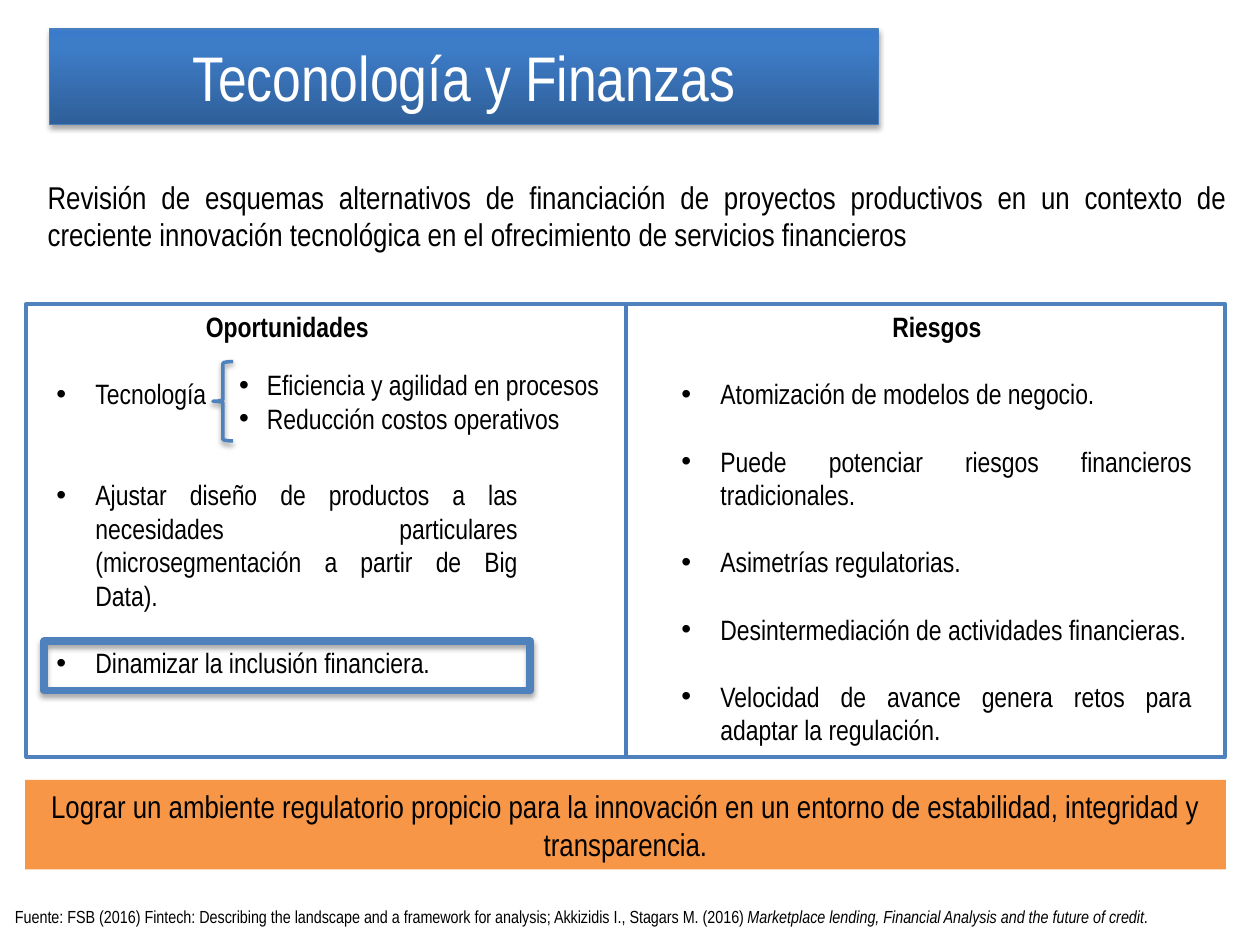
import lxml.etree
import pptx
import pptx.dml.color
import pptx.enum.shapes
import pptx.enum.text
import pptx.oxml.ns
import pptx.util

COLORS = {
    "text": "000000",
    "white": "FFFFFF",
    "outline": "4F81BD",
    "edge": "4B7EBC",
    "banner": "F79646",
    "gradient": {0: "2F5F99", 80: "3D7CC7", 100: "3A7CCB"},
}
FONT = "Arial Narrow"
COLUMNS, ROWS = 100, 75
WIDTH, HEIGHT = pptx.util.Inches(10), pptx.util.Inches(7.5)
LINE_PITCH = 19.2
PANEL_TOP, PANEL_HEIGHT = 24.1, 36
ALIGN = pptx.enum.text.PP_ALIGN
SHAPE = pptx.enum.shapes.MSO_SHAPE


def grid(left, top, width, height):
    """Convert grid columns and rows to lengths."""
    return (
        int(left * WIDTH / COLUMNS),
        int(top * HEIGHT / ROWS),
        int(width * WIDTH / COLUMNS),
        int(height * HEIGHT / ROWS),
    )


def rgb(value):
    """Return a colour from a hex string."""
    return pptx.dml.color.RGBColor.from_string(value)


def add_node(parent, tag, **attributes):
    """Append a drawing element with the given attributes."""
    node = lxml.etree.SubElement(parent, pptx.oxml.ns.qn(tag))
    for name, value in attributes.items():
        node.set(name, str(value))
    return node


def write_paragraph(frame, runs, first, size=16, align=ALIGN.JUSTIFY, gap=0, indent=0, color="text"):
    """Write one paragraph from pairs of text and font values."""
    paragraph = frame.paragraphs[0] if first else frame.add_paragraph()
    paragraph.alignment = align
    if gap:
        paragraph.space_before = pptx.util.Pt(gap * LINE_PITCH)
    if indent:
        properties = paragraph._p.get_or_add_pPr()
        length = pptx.util.Inches(indent)
        properties.set("marL", str(length))
        properties.set("indent", str(-length))
        add_node(properties, "a:buFont", typeface="Arial")
        add_node(properties, "a:buChar", char="•")
    for text, extra in runs:
        run = paragraph.add_run()
        run.text = text
        values = {"name": FONT, "size": pptx.util.Pt(size), **extra}
        for name, value in values.items():
            setattr(run.font, name, value)
        run.font.color.rgb = rgb(COLORS[color])


def add_text(slide, place, paragraphs):
    """Add a wrapping text box with formatted paragraphs."""
    frame = slide.shapes.add_textbox(*grid(*place)).text_frame
    frame.word_wrap = True
    for index, (runs, values) in enumerate(paragraphs):
        write_paragraph(frame, runs, index == 0, **values)


def add_panel(slide, place, heading, items):
    """Add a heading with bulleted items, each after a gap in lines."""
    paragraphs = [([(heading, {"bold": True})], {"align": ALIGN.CENTER})]
    paragraphs += [([(text, {})], {"gap": gap, "indent": 0.31}) for text, gap in items]
    add_text(slide, place, paragraphs)


def add_shape(slide, kind, place, fill=None, line=None, weight=1, shadow=0):
    """Add a preset shape with optional fill, outline and shadow."""
    shape = slide.shapes.add_shape(kind, *grid(*place))
    shape.shadow.inherit = False
    if fill:
        shape.fill.solid()
        shape.fill.fore_color.rgb = rgb(fill)
    else:
        shape.fill.background()
    if line:
        shape.line.color.rgb = rgb(line)
        shape.line.width = pptx.util.Pt(weight)
    else:
        shape.line.fill.background()
    if shadow:
        effects = shape._element.spPr.find(pptx.oxml.ns.qn("a:effectLst"))
        outer = add_node(effects, "a:outerShdw", blurRad=pptx.util.Pt(3.1),
                         dist=pptx.util.Pt(1.8), dir=5400000, rotWithShape=0)
        color = add_node(outer, "a:srgbClr", val=COLORS["text"])
        add_node(color, "a:alpha", val=shadow * 1000)
    return shape


def set_gradient(shape, stops):
    """Fill a shape with a gradient running from bottom to top."""
    shape.fill.gradient()
    shape.fill.gradient_angle = 90
    stop_list = next(shape._element.spPr.iter(pptx.oxml.ns.qn("a:gsLst")))
    for stop in list(stop_list):
        stop_list.remove(stop)
    for position, color in stops.items():
        stop = add_node(stop_list, "a:gs", pos=position * 1000)
        add_node(stop, "a:srgbClr", val=color)


def add_label(shape, text, size, color):
    """Write centred text inside a shape."""
    frame = shape.text_frame
    frame.word_wrap = True
    frame.vertical_anchor = pptx.enum.text.MSO_ANCHOR.MIDDLE
    write_paragraph(frame, [(text, {})], True, size, ALIGN.CENTER, color=color)


def add_divider(slide, column, top, bottom):
    """Add a vertical line between the two panels."""
    left, start, _, end = grid(column, top, 0, bottom)
    line = slide.shapes.add_connector(
        pptx.enum.shapes.MSO_CONNECTOR.STRAIGHT, left, start, left, end)
    line.line.color.rgb = rgb(COLORS["edge"])
    line.line.width = pptx.util.Pt(2.25)
    add_node(line._element.spPr, "a:effectLst")


def main():
    """Build and save the slide."""
    presentation = pptx.Presentation()
    presentation.slide_width, presentation.slide_height = WIDTH, HEIGHT
    slide = presentation.slides.add_slide(presentation.slide_layouts[6])

    title = add_shape(slide, SHAPE.RECTANGLE, (3.9, 2.3, 65.8, 7.6),
                      line=COLORS["edge"], weight=0.75, shadow=35)
    set_gradient(title, COLORS["gradient"])
    add_label(title, "Teconología y Finanzas", 36, "white")

    add_text(slide, (2.8, 13.6, 95.6, 7.1), [([(
        "Revisión de esquemas alternativos de financiación de proyectos productivos en un "
        "contexto de creciente innovación tecnológica en el ofrecimiento de servicios financieros",
        {})], {"size": 18})])
    add_text(slide, (0.2, 71.4, 99.8, 2.7), [([
        ("Fuente: FSB (2016) Fintech: Describing the landscape and a framework for analysis; "
         "Akkizidis I., Stagars M. (2016) ", {}),
        ("Marketplace lending, Financial Analysis and the future of credit", {"italic": True}),
        (".", {})], {"size": 10, "align": ALIGN.LEFT})])

    add_panel(slide, (3.5, PANEL_TOP, 38.6, 31.3), "Oportunidades", [
        ("Tecnología", 1),
        ("Ajustar diseño de productos a las necesidades particulares "
         "(microsegmentación a partir de Big Data).", 2),
        ("Dinamizar la inclusión financiera.", 1),
    ])
    add_panel(slide, (53.1, PANEL_TOP, 42.5, PANEL_HEIGHT), "Riesgos", [
        (text, 1) for text in (
            "Atomización de modelos de negocio.",
            "Puede potenciar riesgos financieros tradicionales.",
            "Asimetrías regulatorias.",
            "Desintermediación de actividades financieras.",
            "Velocidad de avance genera retos para adaptar la regulación.",
        )
    ])
    add_text(slide, (18, 28.7, 35.4, 6.4), [
        ([(text, {})], {"indent": 0.22})
        for text in ("Eficiencia y agilidad en procesos", "Reducción costos operativos")
    ])

    add_shape(slide, SHAPE.RECTANGLE, (3.5, 50.9, 38.6, 3.9),
              line=COLORS["outline"], weight=4.5, shadow=35)
    add_shape(slide, SHAPE.LEFT_BRACE, (16.9, 28.7, 1.6, 6.3),
              line=COLORS["outline"], weight=2, shadow=38)
    banner = add_shape(slide, SHAPE.RECTANGLE, (2, 61.9, 95.3, 7.1), fill=COLORS["banner"])
    add_label(banner, "Lograr un ambiente regulatorio propicio para la innovación en un entorno "
              "de estabilidad, integridad y transparencia.", 18, "text")
    add_shape(slide, SHAPE.RECTANGLE, (2.1, PANEL_TOP, 95.1, PANEL_HEIGHT),
              line=COLORS["outline"], weight=2.25)
    add_divider(slide, 49.7, PANEL_TOP, PANEL_TOP + PANEL_HEIGHT)

    presentation.save("out.pptx")


if __name__ == "__main__":
    main()
